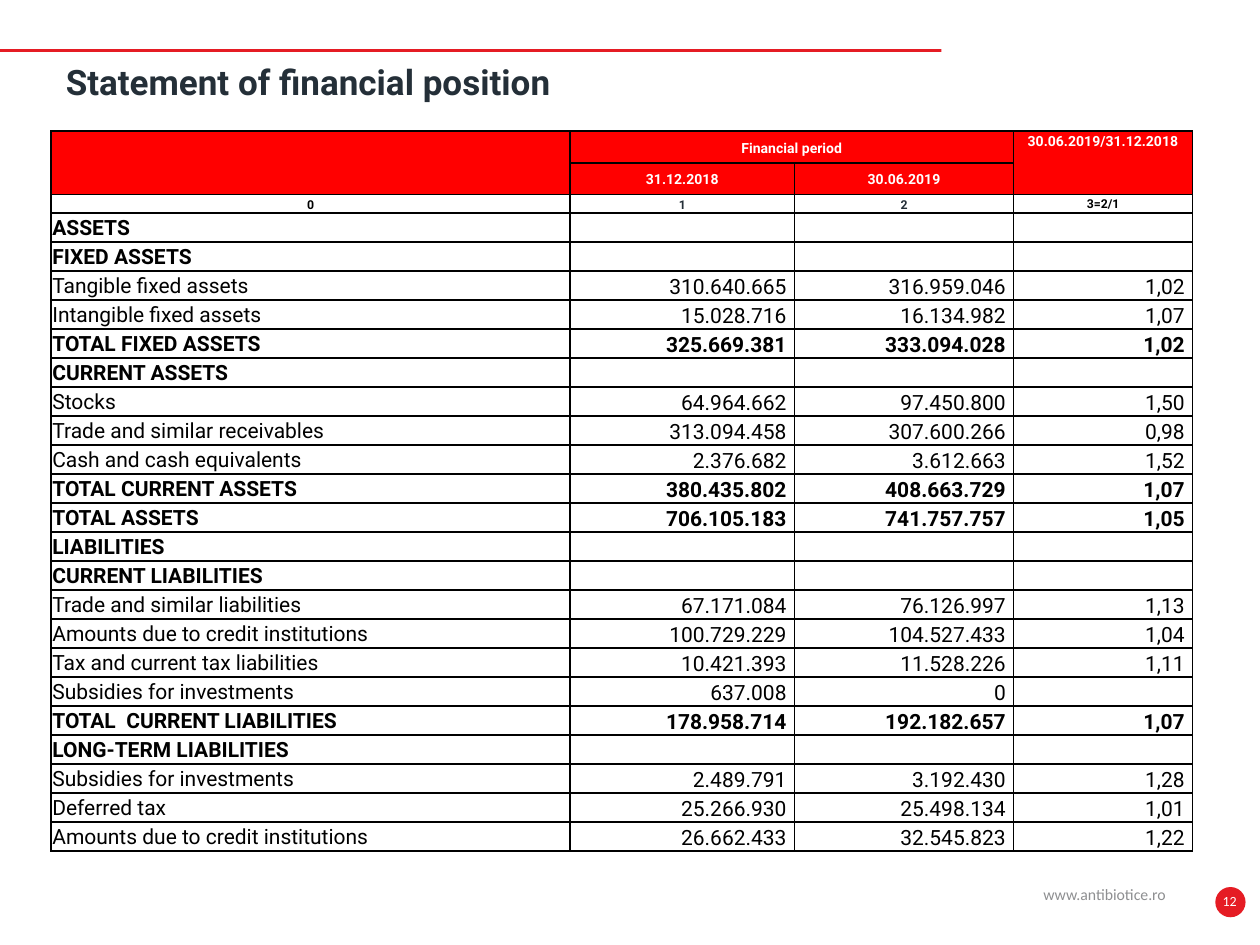
from pptx import Presentation
from pptx.dml.color import RGBColor
from pptx.enum import shapes, text
from pptx.oxml import xmlchemy
from pptx.util import Pt

# Content
TITLE = "Statement of financial position"
WEBSITE = "www.antibiotice.ro"
PAGE_NUMBER = "12"
HEADER = [
    ("", "Financial period", "", "30.06.2019/31.12.2018"),
    ("", "31.12.2018", "30.06.2019", ""),
]
COLUMN_INDEX = ("0", "1", "2", "3=2/1")
POSITIONS = [
    ("ASSETS", "", "", ""),
    ("FIXED ASSETS", "", "", ""),
    ("Tangible fixed assets", "310.640.665", "316.959.046", "1,02"),
    ("Intangible fixed assets", "15.028.716", "16.134.982", "1,07"),
    ("TOTAL FIXED ASSETS", "325.669.381", "333.094.028", "1,02"),
    ("CURRENT ASSETS", "", "", ""),
    ("Stocks", "64.964.662", "97.450.800", "1,50"),
    ("Trade and similar receivables", "313.094.458", "307.600.266", "0,98"),
    ("Cash and cash equivalents", "2.376.682", "3.612.663", "1,52"),
    ("TOTAL CURRENT ASSETS", "380.435.802", "408.663.729", "1,07"),
    ("TOTAL ASSETS", "706.105.183", "741.757.757", "1,05"),
    ("LIABILITIES", "", "", ""),
    ("CURRENT LIABILITIES", "", "", ""),
    ("Trade and similar liabilities", "67.171.084", "76.126.997", "1,13"),
    ("Amounts due to credit institutions", "100.729.229", "104.527.433", "1,04"),
    ("Tax and current tax liabilities", "10.421.393", "11.528.226", "1,11"),
    ("Subsidies for investments", "637.008", "0", ""),
    ("TOTAL  CURRENT LIABILITIES", "178.958.714", "192.182.657", "1,07"),
    ("LONG-TERM LIABILITIES", "", "", ""),
    ("Subsidies for investments", "2.489.791", "3.192.430", "1,28"),
    ("Deferred tax", "25.266.930", "25.498.134", "1,01"),
    ("Amounts due to credit institutions", "26.662.433", "32.545.823", "1,22"),
]


class Theme:
    ACCENT = RGBColor.from_string("E51C24")
    HEADER = RGBColor.from_string("FF0000")
    WHITE = RGBColor.from_string("FFFFFF")
    BLACK = RGBColor.from_string("000000")
    DARK = RGBColor.from_string("242F38")
    GREY = RGBColor.from_string("8E8F91")
    MAIN_FONT, FOOTER_FONT = "Roboto", "Calibri"
    TITLE_SIZE, BODY_SIZE, HEADER_SIZE, INDEX_SIZE = 20, 12, 8, 7
    WEBSITE_SIZE, PAGE_SIZE = 9, 8
    BORDER = 1


# Geometry in points
COLUMN_WIDTHS = (296.64, 128.16, 125.28, 102.24)
ROW_HEIGHTS = [18.2, 18.2, 10.4] + [16.57] * len(POSITIONS)
TABLE_LEFT, TABLE_TOP = 29.2, 74.9
LABEL_INSETS = (0.72, 0.72, 0.72, 0)
VALUE_INSETS = (4.5, 0, 4.5, 0)

LEFT, CENTER, RIGHT = (text.PP_ALIGN.LEFT, text.PP_ALIGN.CENTER, text.PP_ALIGN.RIGHT)
TOP, MIDDLE = text.MSO_ANCHOR.TOP, text.MSO_ANCHOR.MIDDLE


def format_paragraph(paragraph, size, color, name, bold=False, align=LEFT):
    paragraph.alignment = align
    font = paragraph.font
    font.size, font.name, font.bold = Pt(size), name, bold
    font.color.rgb = color


def add_filled_shape(slide, kind, left, top, width, height):
    shape = slide.shapes.add_shape(kind, Pt(left), Pt(top), Pt(width), Pt(height))
    shape.shadow.inherit = False
    shape.fill.solid()
    shape.fill.fore_color.rgb = Theme.ACCENT
    shape.line.fill.background()


def add_footer_text(slide, content, left, top, width, size, color, align):
    box = slide.shapes.add_textbox(Pt(left), Pt(top), Pt(width), Pt(28.8))
    frame = box.text_frame
    frame.word_wrap = True
    frame.vertical_anchor = MIDDLE
    frame.text = content
    format_paragraph(frame.paragraphs[0], size, color, Theme.FOOTER_FONT, align=align)


def add_borders(cell):
    properties = cell._tc.get_or_add_tcPr()
    for side in ("a:lnL", "a:lnR", "a:lnT", "a:lnB"):
        line = xmlchemy.OxmlElement(side)
        line.set("w", str(Pt(Theme.BORDER)))
        fill = xmlchemy.OxmlElement("a:solidFill")
        color = xmlchemy.OxmlElement("a:srgbClr")
        color.set("val", str(Theme.BLACK))
        fill.append(color)
        line.append(fill)
        properties.append(line)


def fill_cell(cell, content, size, color=Theme.BLACK, bold=True, align=CENTER,
              anchor=MIDDLE, insets=VALUE_INSETS, spacing=1.15):
    (cell.margin_left, cell.margin_top,
     cell.margin_right, cell.margin_bottom) = map(Pt, insets)
    cell.vertical_anchor = anchor
    paragraph = cell.text_frame.paragraphs[0]
    if content:
        paragraph.text = content
        paragraph.line_spacing = spacing
        format_paragraph(paragraph, size, color, Theme.MAIN_FONT, bold, align)
    else:
        # The end mark keeps an empty cell from stretching its row
        end_mark = xmlchemy.OxmlElement("a:endParaRPr")
        end_mark.set("sz", str(size * 100))
        paragraph._p.append(end_mark)


def add_position_table(slide):
    frame = slide.shapes.add_table(
        len(ROW_HEIGHTS), len(COLUMN_WIDTHS), Pt(TABLE_LEFT), Pt(TABLE_TOP),
        Pt(sum(COLUMN_WIDTHS)), Pt(sum(ROW_HEIGHTS)))
    table = frame.table
    table.first_row = table.horz_banding = False
    for column, width in zip(table.columns, COLUMN_WIDTHS):
        column.width = Pt(width)
    for number, (row, height) in enumerate(zip(table.rows, ROW_HEIGHTS)):
        row.height = Pt(height)
        for cell in row.cells:
            add_borders(cell)
            if number < len(HEADER):
                cell.fill.solid()
                cell.fill.fore_color.rgb = Theme.HEADER
            else:
                cell.fill.background()

    # Header rows
    for row, contents in enumerate(HEADER):
        for column, content in enumerate(contents):
            fill_cell(table.cell(row, column), content, Theme.HEADER_SIZE,
                      Theme.WHITE, anchor=TOP if column == 3 else MIDDLE)
    table.cell(0, 0).merge(table.cell(1, 0))
    table.cell(0, 1).merge(table.cell(0, 2))
    table.cell(0, 3).merge(table.cell(1, 3))
    for column, content in enumerate(COLUMN_INDEX):
        fill_cell(table.cell(2, column), content, Theme.INDEX_SIZE,
                  Theme.DARK if column in (1, 2) else Theme.BLACK,
                  anchor=TOP if column == 3 else MIDDLE)

    # Headings and totals, written in capitals, are bold
    for row, (label, *values) in enumerate(POSITIONS, start=3):
        bold = label.isupper()
        fill_cell(table.cell(row, 0), label, Theme.BODY_SIZE, bold=bold,
                  align=LEFT, insets=LABEL_INSETS, spacing=1.0)
        for column, value in enumerate(values, start=1):
            fill_cell(table.cell(row, column), value, Theme.BODY_SIZE,
                      bold=bold, align=RIGHT)


def add_title(slide):
    title = slide.shapes.title
    title.left, title.top, title.width, title.height = map(Pt, (25.2, 31, 595.4, 31.7))
    frame = title.text_frame
    frame.text = TITLE
    frame.word_wrap = True
    frame.auto_size = text.MSO_AUTO_SIZE.NONE
    frame.vertical_anchor = TOP
    frame.margin_left = Pt(12.4)
    format_paragraph(frame.paragraphs[0], Theme.TITLE_SIZE, Theme.DARK,
                     Theme.MAIN_FONT, bold=True)


def main():
    presentation = Presentation()
    presentation.slide_width, presentation.slide_height = Pt(720), Pt(540)
    slide = presentation.slides.add_slide(presentation.slide_layouts[5])

    # Red rule and page badge
    add_filled_shape(slide, shapes.MSO_SHAPE.RECTANGLE, -0.7, 28.1, 538.6, 1.6)
    add_filled_shape(slide, shapes.MSO_SHAPE.OVAL, 694.5, 506.9, 17.3, 17.3)
    add_footer_text(slide, PAGE_NUMBER, 687.6, 500.6, 30.2,
                    Theme.PAGE_SIZE, Theme.WHITE, CENTER)
    add_footer_text(slide, WEBSITE, 445, 496.8, 228.2,
                    Theme.WEBSITE_SIZE, Theme.GREY, RIGHT)

    add_position_table(slide)
    add_title(slide)
    presentation.save("out.pptx")


if __name__ == "__main__":
    main()
